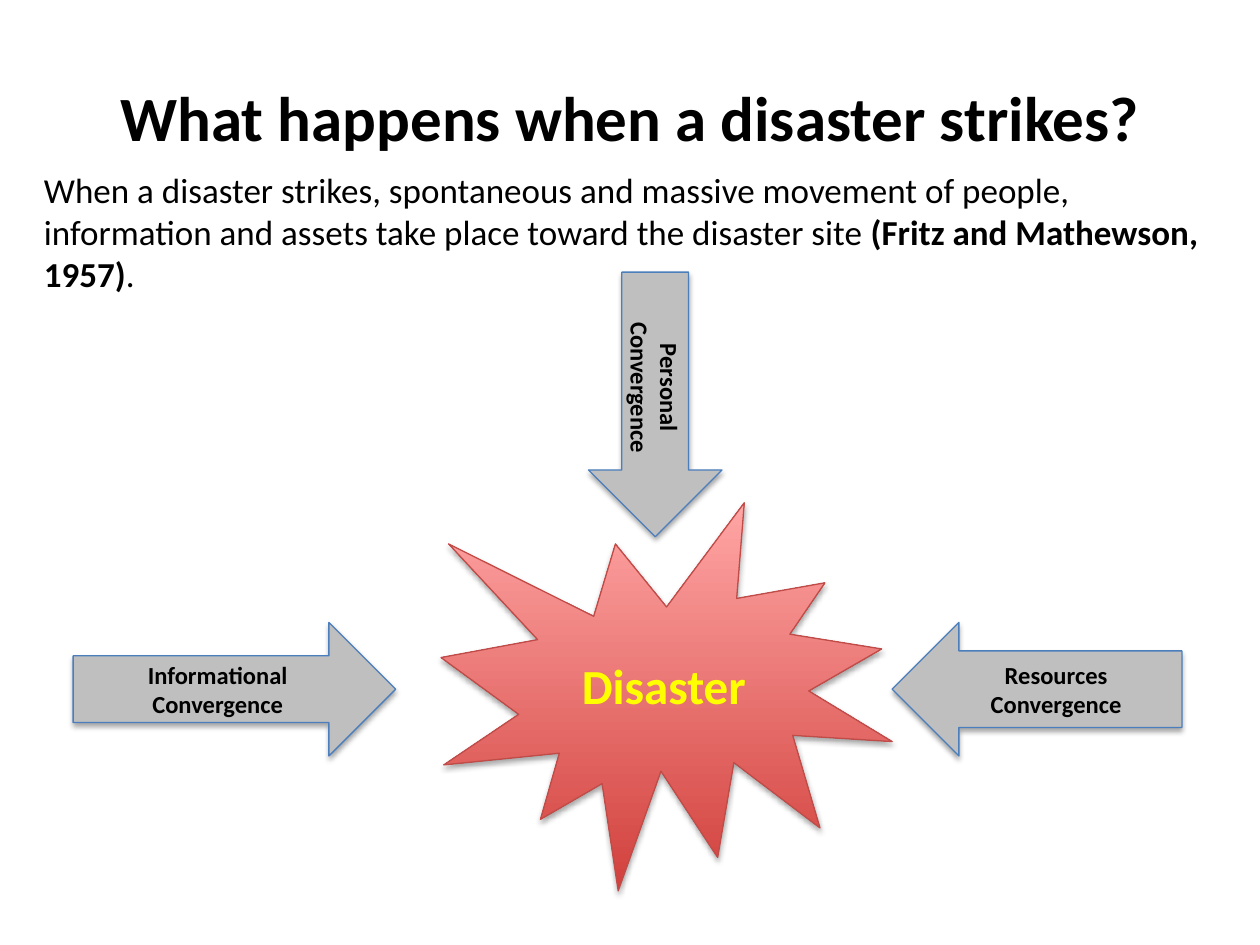
from dataclasses import dataclass

from lxml import etree
from pptx import Presentation
from pptx import util as u
from pptx.dml.color import RGBColor
from pptx.enum import shapes, text
from pptx.oxml import ns

BLACK = RGBColor(0x00, 0x00, 0x00)
YELLOW = RGBColor(0xFF, 0xFF, 0x00)
GRAY = RGBColor(0xBF, 0xBF, 0xBF)
BLUE = RGBColor(0x4B, 0x7E, 0xBC)
DARK_RED = RGBColor(0xD1, 0x40, 0x3C)
LIGHT_RED = RGBColor(0xFF, 0xA6, 0xA5)
RED_LINE = RGBColor(0xBF, 0x4C, 0x48)
FONT = "Calibri"
KIND = shapes.MSO_SHAPE


@dataclass
class Figure:
    label: str
    kind: KIND
    left: float
    top: float
    width: float
    height: float
    rotation: float = 0
    shaft: float = 0.5


BURST = Figure("Disaster", KIND.EXPLOSION1, 252, 287.3, 257.8, 221.8)
ARROWS = [
    Figure("Informational Convergence", KIND.RIGHT_ARROW, 41.8, 355.7, 184.3, 76.3),
    Figure("Personal Convergence", KIND.RIGHT_ARROW, 298.8, 193, 151.2, 76.3, rotation=90),
    Figure("Resources Convergence", KIND.LEFT_ARROW, 509.8, 355.7, 165.6, 76.3, shaft=0.573),
]


def place(box, left: float, top: float, width: float, height: float) -> None:
    box.left, box.top = u.Pt(left), u.Pt(top)
    box.width, box.height = u.Pt(width), u.Pt(height)


def format_span(span, size: float, color: RGBColor = BLACK, bold: bool = False) -> None:
    span.font.name = FONT
    span.font.size = u.Pt(size)
    span.font.bold = bold
    span.font.color.rgb = color


def center_text(box, label: str, size: float, color: RGBColor = BLACK) -> None:
    frame = box.text_frame
    frame.text = label
    frame.word_wrap = True
    frame.vertical_anchor = text.MSO_ANCHOR.MIDDLE
    para = frame.paragraphs[0]
    para.alignment = text.PP_ALIGN.CENTER
    format_span(para.runs[0], size, color, bold=True)


def add_shadow(box) -> None:
    box.shadow.inherit = False
    effects = box._element.spPr.find(ns.qn("a:effectLst"))
    shadow = etree.SubElement(
        effects, ns.qn("a:outerShdw"), blurRad=str(u.Pt(3.1)), dist=str(u.Pt(1.8)),
        dir="5400000", rotWithShape="0")
    color = etree.SubElement(shadow, ns.qn("a:srgbClr"), val=str(BLACK))
    etree.SubElement(color, ns.qn("a:alpha"), val="35000")


def add_figure(page, figure: Figure, line: RGBColor, size: float, color: RGBColor):
    box = page.shapes.add_shape(figure.kind, 0, 0, 0, 0)
    place(box, figure.left, figure.top, figure.width, figure.height)
    box.rotation = figure.rotation
    box.line.color.rgb = line
    box.line.width = u.Pt(0.75)
    add_shadow(box)
    center_text(box, figure.label, size, color)
    return box


def main() -> None:
    deck = Presentation()
    deck.slide_width, deck.slide_height = u.Pt(720), u.Pt(540)
    page = deck.slides.add_slide(deck.slide_layouts[5])

    # Title
    title = page.shapes.title
    place(title, 36, 21.6, 648, 90)
    center_text(title, "What happens when a disaster strikes?", 36)

    # Disaster burst, dark at the bottom
    burst = add_figure(page, BURST, RED_LINE, 28, YELLOW)
    burst.fill.gradient()
    burst.fill.gradient_angle = 90
    for stop, color in zip(burst.fill.gradient_stops, (DARK_RED, LIGHT_RED)):
        stop.color.rgb = color

    # Arrows converging on the burst
    for figure in ARROWS:
        arrow = add_figure(page, figure, BLUE, 14, BLACK)
        arrow.fill.solid()
        arrow.fill.fore_color.rgb = GRAY
        arrow.adjustments[0] = figure.shaft

    # Explanation
    box = page.shapes.add_textbox(0, 0, 0, 0)
    place(box, 18, 92.9, 684.7, 99.4)
    box.text_frame.word_wrap = True
    para = box.text_frame.paragraphs[0]
    for words, bold in (
        ("When a disaster strikes, spontaneous and massive movement of people, "
         "information and assets take place toward the disaster site ", False),
        ("(Fritz and Mathewson, 1957)", True),
        (".", False),
    ):
        span = para.add_run()
        span.text = words
        format_span(span, 20, bold=bold)

    deck.save("out.pptx")


if __name__ == "__main__":
    main()
